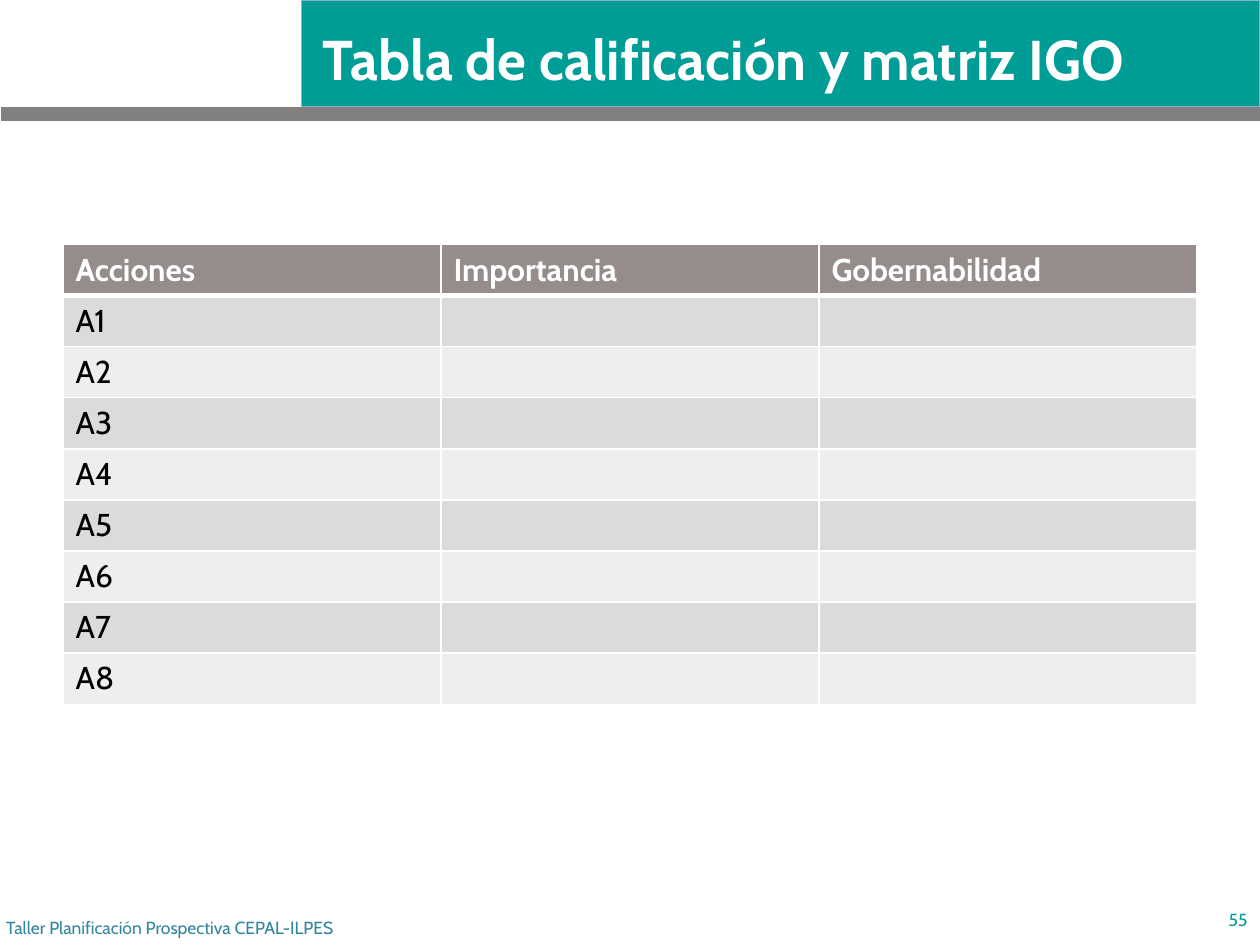
from lxml.etree import SubElement
from pptx import Presentation
from pptx.dml.color import RGBColor
from pptx.enum.shapes import MSO_SHAPE
from pptx.enum.text import MSO_ANCHOR, PP_ALIGN
from pptx.oxml.ns import qn
from pptx.util import Inches, Pt

FONT = "Cabin"
COLORS = {
    "teal": "009D96", "edge": "8FB2CF", "gray": "808080", "white": "FFFFFF",
    "black": "000000", "head": "968C8C", "dark": "DDDADA", "light": "EFEEEE",
    "blue": "31859C",
}
HEADS = ["Acciones", "Importancia", "Gobernabilidad"]
ROWS = 8


def color(name):
    return RGBColor.from_string(COLORS[name])


def style(font, size, tone, bold=False):
    font.name = FONT
    font.size = Pt(size)
    font.bold = bold
    font.color.rgb = color(tone)


def write(frame, text, size, tone, bold=False, align=PP_ALIGN.LEFT):
    para = frame.paragraphs[0]
    para.alignment = align
    run = para.add_run()
    run.text = text
    style(run.font, size, tone, bold)


def add_bar(slide, box, fill, line=None):
    bar = slide.shapes.add_shape(MSO_SHAPE.RECTANGLE, *map(Inches, box))
    bar.shadow.inherit = False
    bar.fill.solid()
    bar.fill.fore_color.rgb = color(fill)
    if line:
        bar.line.color.rgb = color(line)
        bar.line.width = Pt(0.75)
    else:
        bar.line.fill.background()


def add_title(slide, text, box):
    title = slide.shapes.title
    title.left, title.top, title.width, title.height = map(Inches, box)
    frame = title.text_frame
    frame.word_wrap = True
    frame.vertical_anchor = MSO_ANCHOR.MIDDLE
    write(frame, text, 32, "white", True)
    # Bring the title in front of the bars
    title.element.getparent().append(title.element)


def add_note(slide, text, box, tone, align=PP_ALIGN.LEFT):
    frame = slide.shapes.add_textbox(*map(Inches, box)).text_frame
    frame.word_wrap = True
    frame.vertical_anchor = MSO_ANCHOR.MIDDLE
    write(frame, text, 10, tone, align=align)


def set_edge(cell, side, width):
    props = cell._tc.get_or_add_tcPr()
    line = SubElement(props, qn(f"a:ln{side}"), w=str(Pt(width)))
    fill = SubElement(line, qn("a:solidFill"))
    SubElement(fill, qn("a:srgbClr"), val=COLORS["white"])


def fill_cell(cell, text, row):
    head = row == 0
    # Borders come before the fill in the cell properties
    for side in "LRTB":
        thick = (head and side == "B") or (row == 1 and side == "T")
        set_edge(cell, side, 3 if thick else 1)
    cell.fill.solid()
    cell.fill.fore_color.rgb = color(
        "head" if head else "dark" if row % 2 else "light")
    tone = "white" if head else "black"
    if text:
        write(cell.text_frame, text, 18, tone, head)
    else:
        style(cell.text_frame.paragraphs[0].font, 18, tone)


def add_grid(slide, data, box):
    rows, cols = len(data), len(data[0])
    table = slide.shapes.add_table(rows, cols, *map(Inches, box)).table
    for r, line in enumerate(data):
        for c, text in enumerate(line):
            fill_cell(table.cell(r, c), text, r)


def main():
    prs = Presentation()
    prs.slide_width, prs.slide_height = Inches(10), Inches(7.5)
    slide = prs.slides.add_slide(prs.slide_layouts[5])

    # Header
    add_bar(slide, (2.39, 0, 7.61, 0.85), "teal", "edge")
    add_bar(slide, (0.01, 0.85, 10, 0.11), "gray")
    add_title(slide, "Tabla de calificación y matriz IGO",
              (2.46, -0.04, 7.41, 1))

    # Rating table
    data = [HEADS] + [[f"A{n}", "", ""] for n in range(1, ROWS + 1)]
    add_grid(slide, data, (0.5, 1.94, 9, 3.65))

    # Footer
    add_note(slide, "Taller Planificación Prospectiva CEPAL-ILPES",
             (-0.05, 7.16, 5.98, 0.4), "blue")
    add_note(slide, "55", (9.5, 7.1, 0.5, 0.4), "teal", PP_ALIGN.RIGHT)

    prs.save("out.pptx")


if __name__ == "__main__":
    main()
